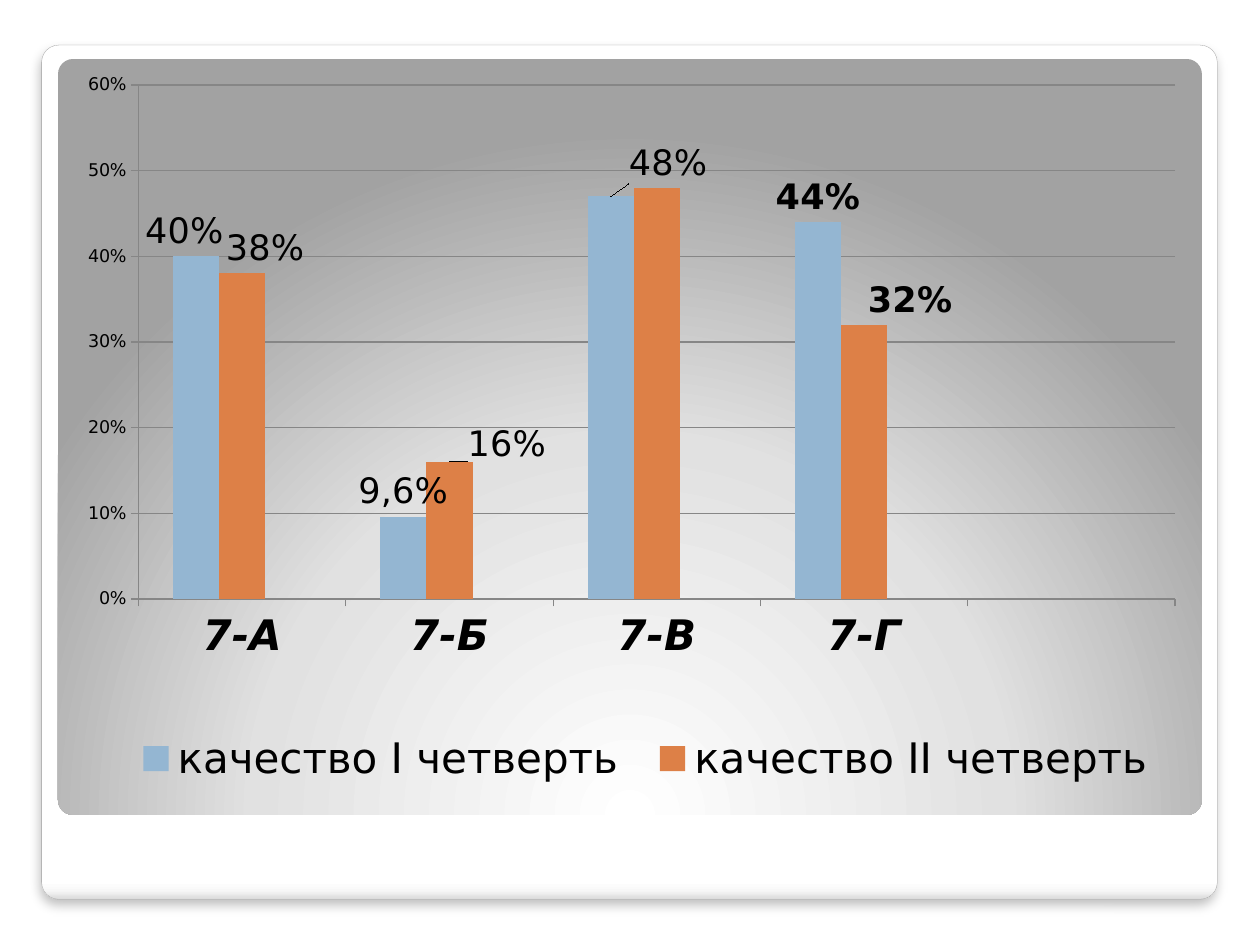
from dataclasses import dataclass

from lxml import etree
from pptx import Presentation
from pptx.chart.data import CategoryChartData
from pptx.dml.color import RGBColor
from pptx.enum.chart import XL_CHART_TYPE, XL_LABEL_POSITION, XL_LEGEND_POSITION, XL_TICK_MARK
from pptx.enum.shapes import MSO_SHAPE
from pptx.oxml import parse_xml
from pptx.oxml.ns import nsdecls
from pptx.util import Cm, Pt

ROUNDED = MSO_SHAPE.ROUNDED_RECTANGLE
CLUSTERED = XL_CHART_TYPE.COLUMN_CLUSTERED
OUTSIDE_END = XL_LABEL_POSITION.OUTSIDE_END
LEGEND_BOTTOM = XL_LEGEND_POSITION.BOTTOM
TICK_OUT, TICK_NONE = XL_TICK_MARK.OUTSIDE, XL_TICK_MARK.NONE


@dataclass(frozen=True)
class Theme:
    font: str = "DejaVu Sans"
    text: RGBColor = RGBColor(0x00, 0x00, 0x00)
    border: RGBColor = RGBColor(0xA4, 0xA4, 0xA4)
    grid: RGBColor = RGBColor(0x86, 0x86, 0x86)
    series: tuple = ("94B6D2", "DD8047", "A5AB81")
    frame_stops: tuple = ((0, "FFFFFF"), (98, "FFFFFF"), (99, "F7F7F7"), (100, "DADADA"))
    panel_stops: tuple = ((0, "FFFFFF"), (55, "E1E1E1"), (100, "A2A2A2"))
    small: int = 10
    label: int = 20
    large: int = 24


THEME = Theme()


def write_text(text_frame, text, *, size, bold=False, color=THEME.text):
    text_frame.text = text
    font = text_frame.paragraphs[0].runs[0].font
    font.name, font.size, font.bold = THEME.font, Pt(size), bold
    font.color.rgb = color


def layout_xml(x, y, width=None, height=None):
    """Manual chart layout: an offset for a label, a box when a size is given."""
    parts = []
    if width is not None:
        parts += [("xMode", "edge"), ("yMode", "edge")]
    parts += [("x", x), ("y", y)]
    if width is not None:
        parts += [("w", width), ("h", height)]
    body = "".join(f'<c:{name} val="{value}"/>' for name, value in parts)
    return parse_xml(f'<c:layout {nsdecls("c")}><c:manualLayout>{body}</c:manualLayout></c:layout>')


presentation = Presentation()
presentation.slide_width, presentation.slide_height = Cm(25.4), Cm(19.05)
slide = presentation.slides.add_slide(presentation.slide_layouts[6])

# Frame and shaded panel
linear = '<a:lin ang="5400000" scaled="0"/>'
radial = '<a:path path="circle"><a:fillToRect l="50000" t="175000" r="50000" b="-75000"/></a:path>'
cards = []
for left, top, width, height, stops, direction in (
    (0.84, 0.91, 23.7, 17.22, THEME.frame_stops, linear),
    (1.17, 1.19, 23.06, 15.24, THEME.panel_stops, radial),
):
    shape = slide.shapes.add_shape(ROUNDED, Cm(left), Cm(top), Cm(width), Cm(height))
    shape.adjustments[0] = 0.02
    shape.shadow.inherit = False
    shape.line.fill.background()
    stop_xml = "".join(
        f'<a:gs pos="{position * 1000}"><a:srgbClr val="{color}"/></a:gs>' for position, color in stops
    )
    gradient = parse_xml(
        f'<a:gradFill {nsdecls("a")} rotWithShape="1"><a:gsLst>{stop_xml}</a:gsLst>{direction}</a:gradFill>'
    )
    shape._element.spPr.find(".//{*}prstGeom").addnext(gradient)
    cards.append(shape)

frame = cards[0]
frame.line.color.rgb = THEME.border
frame.line.width = Pt(0.16)
frame._element.spPr.find("{*}effectLst").append(parse_xml(
    f'<a:outerShdw {nsdecls("a")} blurRad="{Pt(6)}" dist="{Pt(4)}" dir="5400000" rotWithShape="0">'
    '<a:srgbClr val="000000"><a:alpha val="25000"/></a:srgbClr></a:outerShdw>'
))

# Chart; the last category and the third series are empty
chart_data = CategoryChartData(number_format="0%")
chart_data.categories = ["7-А", "7-Б", "7-В", "7-Г", ""]
chart_data.add_series("качество I четверть", (0.4, 0.096, 0.47, 0.44, None))
chart_data.add_series("качество II четверть", (0.38, 0.16, 0.48, 0.32, None))
chart_data.add_series("Series 3", (None,) * 5)
chart = slide.shapes.add_chart(
    CLUSTERED, Cm(1.4), Cm(1.4), Cm(23.22), Cm(15.7), chart_data
).chart
chart.has_title = False
chart.font.name, chart.font.size = THEME.font, Pt(THEME.small)
chart.font.color.rgb = THEME.text

plot = chart.plots[0]
plot.gap_width, plot.overlap = 150, 0
plot.vary_by_categories = False
plot_area = chart._chartSpace.chart.plotArea
for old_layout in plot_area.findall("{*}layout"):
    plot_area.remove(old_layout)
plot_layout = layout_xml(0.06, 0.02, 0.9, 0.66)
target = etree.Element(plot_layout.tag.replace("layout", "layoutTarget"), val="inner")
plot_layout[0].insert(0, target)
plot_area.insert(0, plot_layout)

category_axis, value_axis = chart.category_axis, chart.value_axis
value_axis.minimum_scale, value_axis.maximum_scale, value_axis.major_unit = 0, 0.6, 0.1
value_axis.has_major_gridlines = True
value_axis.major_gridlines.format.line.color.rgb = THEME.grid
value_axis.tick_labels.number_format = "0%"
value_axis.tick_labels.number_format_is_linked = False
for axis, size, strong in ((category_axis, THEME.large, True), (value_axis, THEME.small, False)):
    axis.major_tick_mark, axis.minor_tick_mark = TICK_OUT, TICK_NONE
    axis.format.line.color.rgb = THEME.grid
    font = axis.tick_labels.font
    font.name, font.size, font.bold, font.italic = THEME.font, Pt(size), strong, strong
    font.color.rgb = THEME.text

for series, color in zip(plot.series, THEME.series):
    series.format.fill.solid()
    series.format.fill.fore_color.rgb = RGBColor.from_string(color)
    series.invert_if_negative = False

# Data labels: (point, text, horizontal shift, vertical shift); None keeps the value
point_labels = (
    ((0, "40%", -0.01, 0), (1, "9,6%", 0, 0), (2, "48%", 0.05, -0.01)),
    ((0, "38%", 0.02, 0), (1, "16%", 0.05, 0.01), (2, "", 0, 0), (3, None, 0.04, 0)),
)
for series, entries in zip(plot.series, point_labels):
    labels = series.data_labels
    labels.show_value = True
    labels.number_format, labels.number_format_is_linked = "0%", False
    labels.position = OUTSIDE_END
    labels.font.name, labels.font.size, labels.font.bold = THEME.font, Pt(THEME.label), True
    for index, text, shift_x, shift_y in entries:
        label = series.points[index].data_label
        if text:
            write_text(label.text_frame, text, size=THEME.label)
        else:
            label.font.name, label.font.size, label.font.bold = THEME.font, Pt(THEME.label), True
        label.position = OUTSIDE_END
        element = labels._element.xpath(f'c:dLbl[c:idx/@val="{index}"]')[0]
        if text == "":
            element.find("{*}showVal").set("val", "0")
        for old_layout in element.findall("{*}layout"):
            element.remove(old_layout)
        element.insert(1, layout_xml(shift_x, shift_y))

chart.has_legend = True
legend = chart.legend
legend.position, legend.include_in_layout = LEGEND_BOTTOM, False
legend.font.name, legend.font.size = THEME.font, Pt(THEME.large)
legend.font.color.rgb = THEME.text
for old_layout in legend._element.findall("{*}layout"):
    legend._element.remove(old_layout)
hidden_entry = parse_xml(
    f'<c:legendEntry {nsdecls("c")}><c:idx val="2"/><c:delete val="1"/></c:legendEntry>'
)
legend._element.find("{*}legendPos").addnext(hidden_entry)
hidden_entry.addnext(layout_xml(0.04, 0.83, 0.92, 0.11))

presentation.save("out.pptx")
